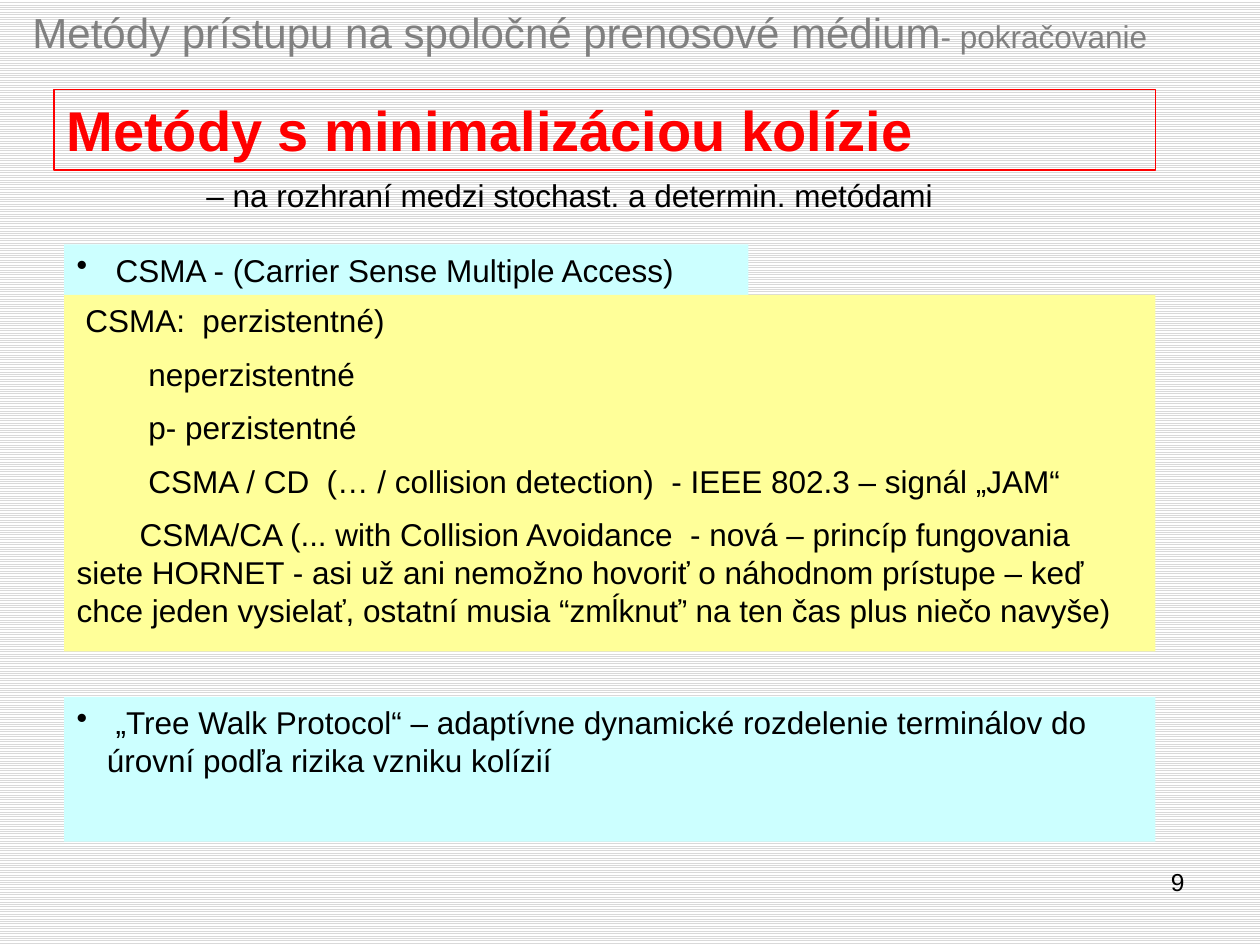
from pptx import Presentation
from pptx.dml.color import RGBColor
from pptx.enum.dml import MSO_PATTERN
from pptx.enum.shapes import MSO_SHAPE
from pptx.enum.text import MSO_ANCHOR, PP_ALIGN
from pptx.oxml.ns import qn
from pptx.util import Inches, Pt

BLACK = RGBColor(0x00, 0x00, 0x00)
WHITE = RGBColor(0xFF, 0xFF, 0xFF)
GREY = RGBColor(0x80, 0x80, 0x80)
STRIPE = RGBColor(0xD9, 0xD9, 0xD9)
RED = RGBColor(0xFF, 0x00, 0x00)
CYAN = RGBColor(0xCC, 0xFF, 0xFF)
YELLOW = RGBColor(0xFF, 0xFF, 0x99)
STRIPES = MSO_PATTERN.LIGHT_HORIZONTAL
RECTANGLE = MSO_SHAPE.RECTANGLE
TOP = MSO_ANCHOR.TOP
LEFT, RIGHT = PP_ALIGN.LEFT, PP_ALIGN.RIGHT

FONT = "Arial"
BODY_SIZE = 18
PANEL_LEFT = 0.51
PANEL_WIDTH = 8.66
BULLET_INDENT = Inches(0.24)

CSMA_VARIANTS = [
    " CSMA:  perzistentné)",
    "\t neperzistentné",
    "\t p- perzistentné",
    "\t CSMA / CD  (… / collision detection)  - IEEE 802.3 – signál „JAM“",
    "\tCSMA/CA (... with Collision Avoidance  - nová – princíp fungovania "
    "siete HORNET - asi už ani nemožno hovoriť o náhodnom prístupe – keď "
    "chce jeden vysielať, ostatní musia “zmĺknuť’ na ten čas plus niečo navyše)",
]


def add_span(para, text, size=BODY_SIZE, color=BLACK, bold=False):
    span = para.add_run()
    span.text = text
    span.font.name = FONT
    span.font.size = Pt(size)
    span.font.bold = bold
    span.font.color.rgb = color


def add_text_box(page, box):
    frame = page.shapes.add_textbox(*map(Inches, box)).text_frame
    frame.word_wrap = True
    return frame


def add_rectangle(page, box, fill=None, line=None):
    shape = page.shapes.add_shape(RECTANGLE, *map(Inches, box))
    shape.shadow.inherit = False
    if fill is None:
        shape.fill.background()
    else:
        shape.fill.solid()
        shape.fill.fore_color.rgb = fill
    if line is None:
        shape.line.fill.background()
    else:
        shape.line.color.rgb = line
        shape.line.width = Pt(0.75)
    frame = shape.text_frame
    frame.word_wrap = True
    frame.vertical_anchor = TOP
    frame.paragraphs[0].alignment = LEFT
    return frame


def add_background(page):
    fill = page.background.fill
    fill.patterned()
    fill.pattern = STRIPES
    fill.fore_color.rgb = STRIPE
    fill.back_color.rgb = WHITE


def add_title(page, box):
    para = add_text_box(page, box).paragraphs[0]
    add_span(para, "Metódy prístupu na spoločné prenosové médium", 24, GREY)
    add_span(para, "- pokračovanie", BODY_SIZE, GREY)


def add_heading(page, box):
    para = add_rectangle(page, box, line=RED).paragraphs[0]
    add_span(para, "Metódy s minimalizáciou kolízie", 32, RED, bold=True)


def add_subheading(page, box):
    para = add_text_box(page, box).paragraphs[0]
    add_span(para, "– na rozhraní medzi stochast. a determin. metódami")


def add_bullet_panel(page, box, text):
    para = add_rectangle(page, box, fill=CYAN).paragraphs[0]
    properties = para._p.get_or_add_pPr()
    properties.set("marL", str(BULLET_INDENT))
    properties.set("indent", str(-BULLET_INDENT))
    bullet = properties.makeelement(qn("a:buChar"), {"char": "•"})
    properties.append(bullet)
    add_span(para, text)


def add_variants_panel(page, box):
    frame = add_rectangle(page, box, fill=YELLOW)
    for index, text in enumerate(CSMA_VARIANTS):
        para = frame.add_paragraph() if index else frame.paragraphs[0]
        para.alignment = LEFT
        if index:
            para.space_before = Pt(BODY_SIZE / 2)
        add_span(para, text)


def add_page_number(page, box):
    para = add_text_box(page, box).paragraphs[0]
    para.alignment = RIGHT
    add_span(para, "9", 14)


def main():
    deck = Presentation()
    deck.slide_width = Inches(10)
    deck.slide_height = Inches(7.5)
    page = deck.slides.add_slide(deck.slide_layouts[6])
    add_background(page)
    add_page_number(page, (7.17, 6.83, 2.33, 0.52))
    add_title(page, (0.16, 0, 9.14, 0.5))
    add_heading(page, (0.43, 0.71, 8.74, 0.64))
    add_bullet_panel(page, (PANEL_LEFT, 1.94, 5.43, 0.4),
                     " CSMA - (Carrier Sense Multiple Access)")
    add_bullet_panel(page, (PANEL_LEFT, 5.53, PANEL_WIDTH, 1.15),
                     " „Tree Walk Protocol“ – adaptívne dynamické rozdelenie "
                     "terminálov do úrovní podľa rizika vzniku kolízií")
    add_variants_panel(page, (PANEL_LEFT, 2.34, PANEL_WIDTH, 2.83))
    add_subheading(page, (1.54, 1.35, 7.48, 0.4))
    deck.save("out.pptx")


if __name__ == "__main__":
    main()
